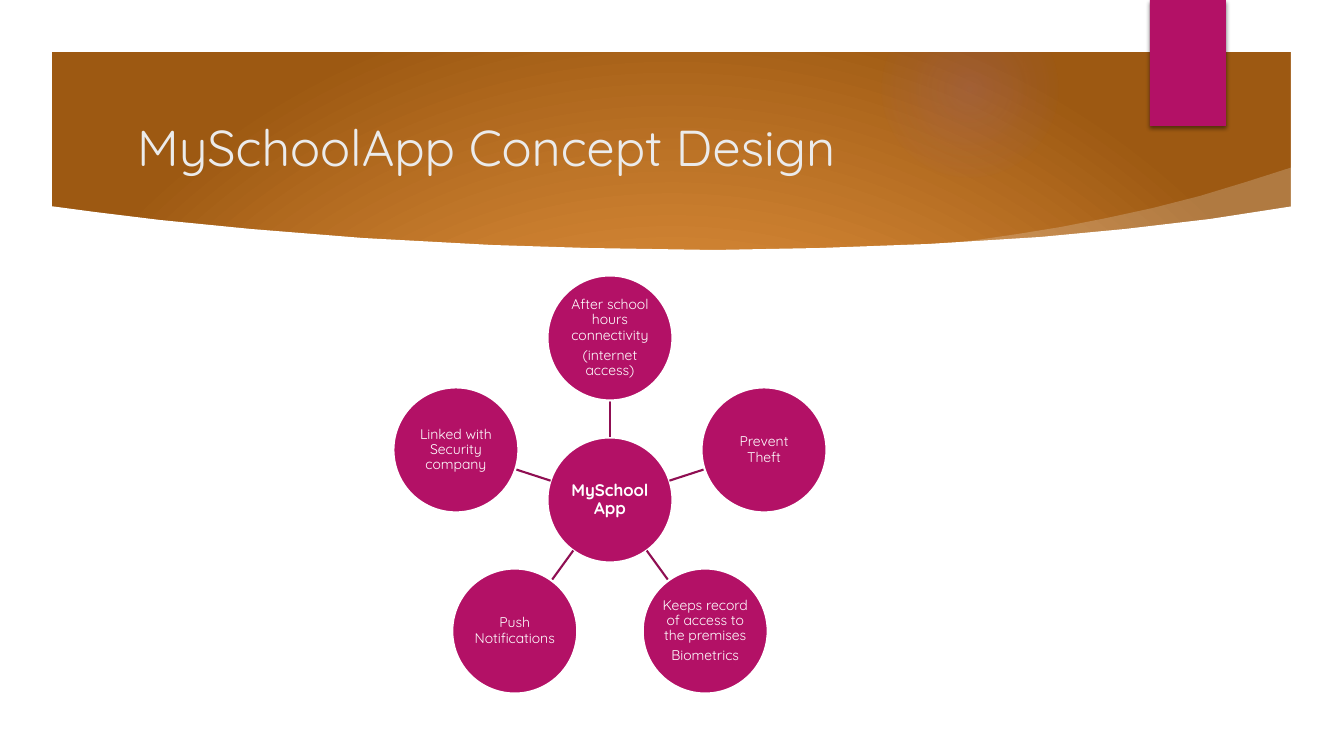
from math import cos, radians, sin

from lxml import etree
from pptx import Presentation, util as u
from pptx.dml.color import RGBColor
from pptx.enum import shapes, text
from pptx.oxml.ns import qn

W, H = 1344, 756
SCALE = 12192000 / W
FONT = "Quicksand"
WHITE = RGBColor(0xFF, 0xFF, 0xFF)
MAGENTA = RGBColor(0xB3, 0x11, 0x66)
PLUM = RGBColor(0x8F, 0x0E, 0x52)
PALE = RGBColor(0xEB, 0xEB, 0xEB)
VIOLET = RGBColor(0x9B, 0x6B, 0xF2)

TITLE = "MySchoolApp Concept Design"
HUB = ["MySchoolApp"]
FEATURES = [  # clockwise from the top
    ["After school hours connectivity", "(internet access)"],
    ["Prevent Theft"],
    ["Keeps record of access to the premises", "Biometrics"],
    ["Push Notifications"],
    ["Linked with Security company"],
]
CX, CY, RING, DIAMETER = 610, 500, 162, 125

# (position %, colour, opacity %)
BANNER_STOPS = [(0, RGBColor(0xF6, 0xD4, 0xB0), 100), (19, RGBColor(0xF1, 0xBB, 0x83), 100),
                (46, RGBColor(0xEA, 0x99, 0x44), 100), (100, RGBColor(0x9D, 0x59, 0x12), 100)]
GLOW_STOPS = [(0, VIOLET, 14), (36, VIOLET, 7), (73, VIOLET, 0)]

SWOOSH = [(937, 245), (977, 240), (1018, 234), (1061, 227), (1107, 218), (1153, 208),
          (1200, 196), (1246, 182), (1293, 167), (1299, 216), (1111, 240), (941, 252)]
PAGE = [(50, 206), (95, 212), (160, 220), (251, 229), (363, 238), (492, 245), (588, 248),
        (714, 250), (820, 248), (928, 244), (1040, 237), (1125, 229), (1210, 219),
        (1294, 206), (1294, 706), (50, 706)]
FRAME_OUTER = [(0, 0), (0, H), (W, H), (W, 0)]
FRAME_INNER = [(52, 52), (1291, 52), (1291, 704), (52, 704)]


def px(n):
    return u.Emu(round(n * SCALE))


def set_alpha(color, percent):
    etree.SubElement(color, qn("a:alpha"), val=str(percent * 1000))


def radial(fill, owner, stops, top, bottom):
    """Turn a fill into a circular gradient; top and bottom place its focus in %."""
    fill.gradient()
    grad = owner.find(".//" + qn("a:gradFill"))
    for child in list(grad):
        grad.remove(child)
    stop_list = etree.SubElement(grad, qn("a:gsLst"))
    for pos, color, opacity in stops:
        stop = etree.SubElement(stop_list, qn("a:gs"), pos=str(pos * 1000))
        rgb = etree.SubElement(stop, qn("a:srgbClr"), val=str(color))
        if opacity < 100:
            set_alpha(rgb, opacity)
    focus = etree.SubElement(grad, qn("a:path"), path="circle")
    etree.SubElement(focus, qn("a:fillToRect"), l="50000", t=str(top * 1000),
                     r="50000", b=str(bottom * 1000))


def add_shape(s, kind, x, y, w, h):
    sp = s.shapes.add_shape(kind, px(x), px(y), px(w), px(h))
    sp.shadow.inherit = False
    sp.line.fill.background()
    return sp


def add_outline(s, *contours):
    """Add a white freeform made of one or more closed contours."""
    fb = s.shapes.build_freeform(*contours[0][0], scale=SCALE)
    for i, points in enumerate(contours):
        if i:
            fb.move_to(*points[0])
        fb.add_line_segments(points[1:], close=True)
    sp = fb.convert_to_shape()
    sp.shadow.inherit = False
    sp.fill.solid()
    sp.fill.fore_color.rgb = WHITE
    sp.line.fill.background()
    return sp


def add_bubble(s, x, y, lines, size, bold=False):
    """Add a labelled circle centred on x, y."""
    r = DIAMETER / 2
    sp = add_shape(s, shapes.MSO_SHAPE.OVAL, x - r, y - r, DIAMETER, DIAMETER)
    sp.fill.solid()
    sp.fill.fore_color.rgb = MAGENTA
    sp.line.color.rgb = WHITE
    sp.line.width = u.Pt(1.5)
    tf = sp.text_frame
    tf.word_wrap = True
    tf.vertical_anchor = text.MSO_ANCHOR.MIDDLE
    tf.margin_left = tf.margin_right = tf.margin_top = tf.margin_bottom = px(1)
    for i, line in enumerate(lines):
        p = tf.add_paragraph() if i else tf.paragraphs[0]
        p.alignment = text.PP_ALIGN.CENTER
        p.line_spacing = 0.9
        p.space_after = u.Pt(size * 0.35)
        add_run(p, line, size, WHITE, bold)


def add_run(p, content, size, color, bold=False):
    r = p.add_run()
    r.text = content
    r.font.name, r.font.size, r.font.bold = FONT, u.Pt(size), bold
    r.font.color.rgb = color


def add_spoke(s, dx, dy):
    """Join the hub to the bubble lying in direction dx, dy."""
    near, far = DIAMETER / 2, RING - DIAMETER / 2
    line = s.shapes.add_connector(
        shapes.MSO_CONNECTOR.STRAIGHT, px(CX + near * dx), px(CY + near * dy),
        px(CX + far * dx), px(CY + far * dy))
    line.line.color.rgb = PLUM
    line.line.width = u.Pt(1.5)
    etree.SubElement(line.element.spPr, qn("a:effectLst"))


def add_banner(s):
    radial(s.background.fill, s.element, BANNER_STOPS, 130, -30)
    glow = add_shape(s, shapes.MSO_SHAPE.OVAL, 882, 1, 176, 176)
    radial(glow.fill, glow.element, GLOW_STOPS, 50, 50)
    swoosh = add_outline(s, SWOOSH)
    set_alpha(swoosh.element.spPr.find(".//" + qn("a:srgbClr")), 20)
    add_outline(s, PAGE)
    add_outline(s, FRAME_OUTER, FRAME_INNER)

    ribbon = add_shape(s, shapes.MSO_SHAPE.RECTANGLE, 1150, 0, 76, 126)
    ribbon.fill.solid()
    ribbon.fill.fore_color.rgb = MAGENTA
    effects = ribbon.element.spPr.find(qn("a:effectLst"))
    shadow = etree.SubElement(effects, qn("a:outerShdw"), blurRad=str(u.Pt(3)),
                              dist=str(u.Pt(2)), dir="5400000", rotWithShape="0")
    set_alpha(etree.SubElement(shadow, qn("a:srgbClr"), val="000000"), 45)


def add_title(s):
    title = s.shapes.title
    s.shapes.element.append(title.element)  # bring in front of the banner
    title.left, title.top, title.width, title.height = map(px, (127, 107, 966, 78))
    tf = title.text_frame
    tf.word_wrap = True
    tf.auto_size = text.MSO_AUTO_SIZE.NONE
    tf.vertical_anchor = text.MSO_ANCHOR.MIDDLE
    p = tf.paragraphs[0]
    p.alignment = text.PP_ALIGN.LEFT
    add_run(p, TITLE, 36, PALE)


def add_wheel(s):
    add_bubble(s, CX, CY, HUB, 12, bold=True)
    for i, lines in enumerate(FEATURES):
        angle = radians(360 * i / len(FEATURES) - 90)
        dx, dy = cos(angle), sin(angle)
        add_spoke(s, dx, dy)
        add_bubble(s, CX + RING * dx, CY + RING * dy, lines, 10)


def main():
    prs = Presentation()
    prs.slide_width, prs.slide_height = px(W), px(H)
    s = prs.slides.add_slide(prs.slide_layouts[5])
    add_banner(s)
    add_title(s)
    add_wheel(s)
    prs.save("out.pptx")


if __name__ == "__main__":
    main()
